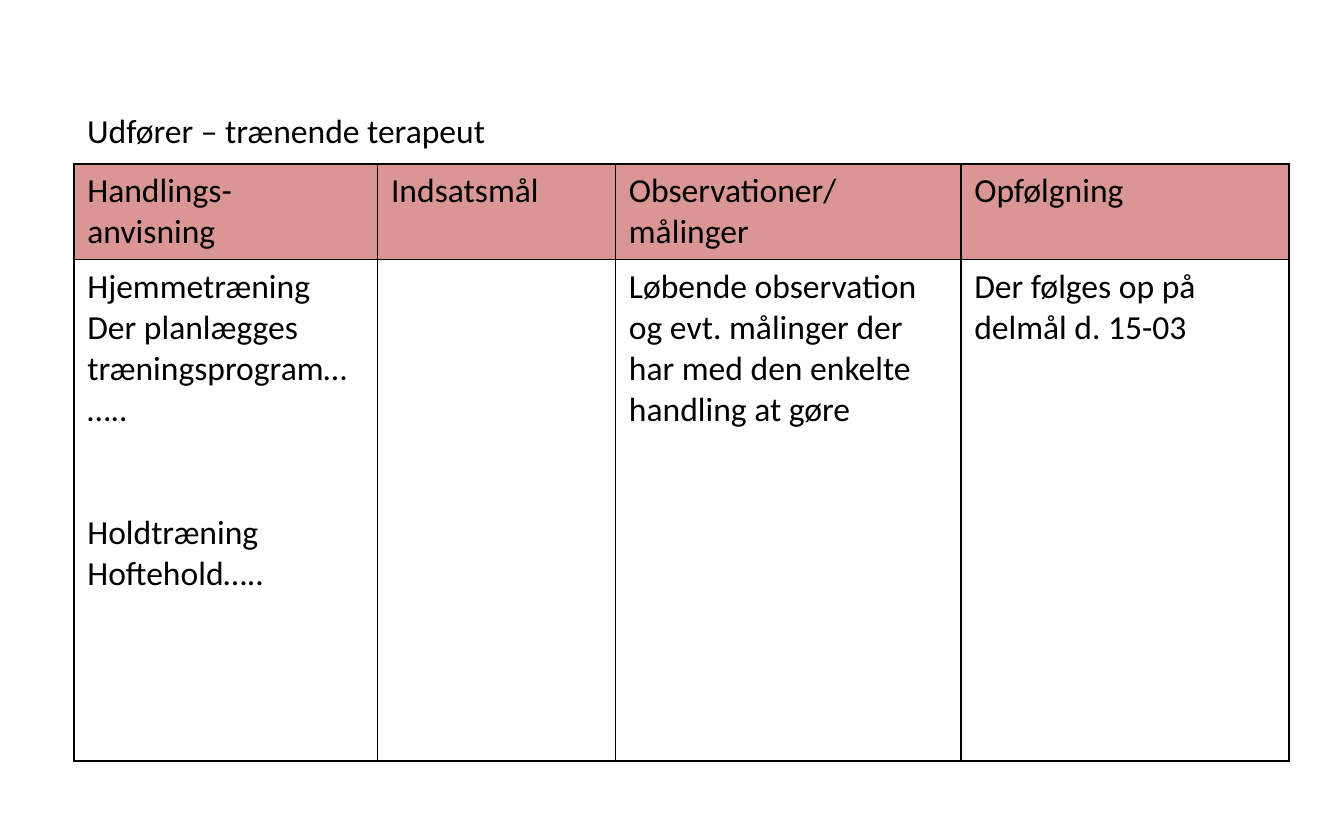
from lxml import etree
from pptx import Presentation
from pptx import util as u
from pptx.dml.color import RGBColor
from pptx.enum import text
from pptx.oxml.ns import qn

# Content: each cell is a list of (line, points of space before)
HEADING = "Udfører – trænende terapeut"
HEADERS = [
    [("Handlings-", 0), ("anvisning", 0)],
    [("Indsatsmål", 0)],
    [("Observationer/", 0), ("målinger", 0)],
    [("Opfølgning", 0)],
]
ACTIONS = [
    [("Hjemmetræning", 0), ("Der planlægges træningsprogram……..", 0),
     ("Holdtræning", 44), ("Hoftehold…..", 0)],
    [],
    [("Løbende observation og evt. målinger der har med den enkelte handling at gøre", 0)],
    [("Der følges op på delmål d. 15-03", 0)],
]
COLUMN_WIDTHS = [2.26, 1.77, 2.57, 2.44]
ROWS = [(HEADERS, 0.7, "D99694"), (ACTIONS, 3.73, None)]
LEFT, TABLE_TOP = 0.55, 1.22
BLACK = "000000"


def color(value):
    return RGBColor.from_string(value)


def write_lines(frame, lines):
    for i, (line, space) in enumerate(lines):
        paragraph = frame.paragraphs[0] if i == 0 else frame.add_paragraph()
        if space:
            paragraph.space_before = u.Pt(space)
        run = paragraph.add_run()
        run.text = line
        run.font.name = "Calibri"
        run.font.size = u.Pt(18)
        run.font.bold = False
        run.font.color.rgb = color(BLACK)


def add_borders(cell):
    properties = cell._tc.get_or_add_tcPr()
    for position, side in enumerate(("a:lnL", "a:lnR", "a:lnT", "a:lnB")):
        line = etree.Element(qn(side), w=str(u.Pt(1)))
        fill = etree.SubElement(line, qn("a:solidFill"))
        etree.SubElement(fill, qn("a:srgbClr"), val=BLACK)
        properties.insert(position, line)


prs = Presentation()
prs.slide_width, prs.slide_height = u.Inches(10), u.Inches(6.25)
slide = prs.slides.add_slide(prs.slide_layouts[6])

# Action table
table = slide.shapes.add_table(
    len(ROWS), len(COLUMN_WIDTHS), u.Inches(LEFT), u.Inches(TABLE_TOP),
    u.Inches(sum(COLUMN_WIDTHS)), u.Inches(sum(height for _, height, _ in ROWS))).table
table.horz_banding = False
for column, width in zip(table.columns, COLUMN_WIDTHS):
    column.width = u.Inches(width)
for row, (contents, height, fill) in zip(table.rows, ROWS):
    row.height = u.Inches(height)
    for cell, lines in zip(row.cells, contents):
        if fill:
            cell.fill.solid()
            cell.fill.fore_color.rgb = color(fill)
        else:
            cell.fill.background()
        add_borders(cell)
        write_lines(cell.text_frame, lines)

# Heading above the table
heading = slide.shapes.add_textbox(
    u.Inches(LEFT), u.Inches(0.77), u.Inches(5.97), u.Inches(0.4)).text_frame
heading.word_wrap = True
heading.auto_size = text.MSO_AUTO_SIZE.SHAPE_TO_FIT_TEXT
write_lines(heading, [(HEADING, 0)])

prs.save("out.pptx")
